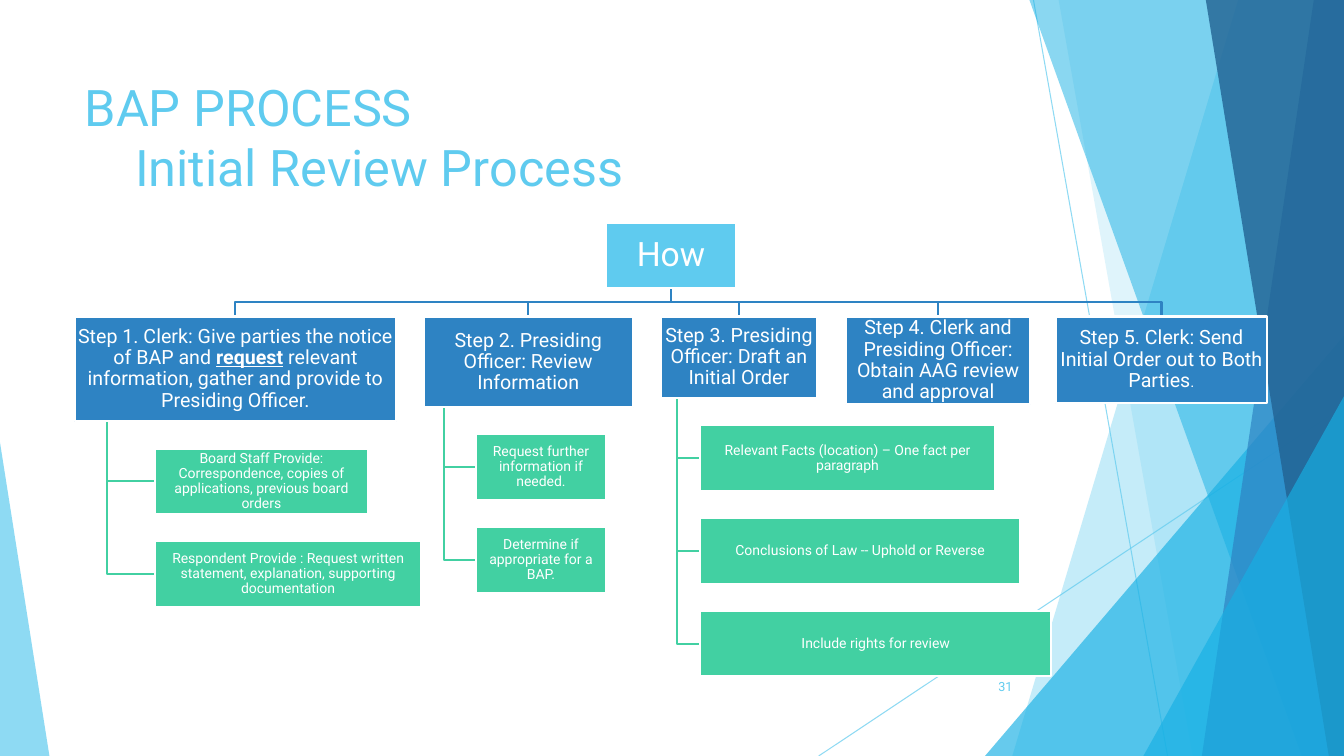
from lxml import etree
from pptx import Presentation
from pptx.dml.color import RGBColor
from pptx.enum import shapes, text
from pptx.oxml import ns
from pptx.util import Inches, Pt

SKY = RGBColor(0x5F, 0xCB, 0xEF)
CYAN = RGBColor(0x17, 0xB0, 0xE4)
BLUE = RGBColor(0x2E, 0x83, 0xC3)
NAVY = RGBColor(0x22, 0x62, 0x92)
GREEN = RGBColor(0x42, 0xD0, 0xA2)
WHITE = RGBColor(0xFF, 0xFF, 0xFF)
FONT = "Roboto"
WIDE, HIGH = 13.33, 7.5

BANDS = [
    ([(12.28, 0), (WIDE, 0), (WIDE, HIGH), (10.04, HIGH)], SKY, 36),
    ([(10.5, 0), (WIDE, 0), (WIDE, HIGH), (11.83, HIGH)], SKY, 20),
    ((9.77, 3.33, 3.56, 4.17, 1), CYAN, 66),
    ([(10.21, 0), (WIDE, 0), (WIDE, HIGH), (12.91, HIGH)], CYAN, 50),
    ([(13.03, 0), (WIDE, 0), (WIDE, HIGH), (11.92, HIGH)], BLUE, 70),
    ([(11.96, 0), (WIDE, 0), (WIDE, HIGH), (13.18, HIGH)], NAVY, 80),
    ((11.34, 3.93, 1.99, 3.57, 1), CYAN, 66),
    ((0, 4.39, 0.49, 3.11, 0), SKY, 70),
]

STEPS = [
    (0.74, 3.19, 1.04,
     ["Step 1. Clerk: Give parties the notice of BAP and ", "request",
      " relevant information, gather and provide to Presiding Officer."],
     [(2.11, "Board Staff Provide: Correspondence, copies of applications, "
             "previous board orders"),
      (2.64, "Respondent Provide : Request written statement, explanation, "
             "supporting documentation")]),
    (4.2, 2.08, 0.9, ["Step 2. Presiding Officer: Review Information"],
     [(1.29, "Request further information if needed."),
      (1.29, "Determine if appropriate for a BAP.")]),
    (6.56, 1.54, 0.81, ["Step 3. Presiding Officer: Draft an Initial Order"],
     [(2.92, "Relevant Facts (location) – One fact per paragraph"),
      (3.17, "Conclusions of Law -- Uphold or Reverse"),
      (3.48, "Include rights for review")]),
    (8.39, 1.83, 0.87,
     ["Step 4. Clerk and Presiding Officer: Obtain AAG review and approval"],
     []),
    (10.47, 2.1, 0.86,
     ["Step 5. Clerk: Send Initial Order out to Both Parties", "."], []),
]


def fade(part, pct):
    for clr in part.iter(ns.qn("a:srgbClr")):
        etree.SubElement(clr, ns.qn("a:alpha")).set("val", str(pct * 1000))


def style(run, size, color):
    run.font.name = FONT
    run.font.size = Pt(size)
    run.font.color.rgb = color


def trace(slide, points, close):
    pts = [(Inches(x), Inches(y)) for x, y in points]
    pen = slide.shapes.build_freeform(*pts[0], scale=1.0)
    pen.add_line_segments(pts[1:], close=close)
    form = pen.convert_to_shape()
    form.shadow.inherit = False
    return form


def backdrop(slide):
    for ends in [(10.25, 0, 11.58, HIGH), (WIDE, 4.03, 8.12, HIGH)]:
        line = slide.shapes.add_connector(
            shapes.MSO_CONNECTOR.STRAIGHT, *map(Inches, ends))
        line.line.color.rgb = SKY
        line.line.width = Pt(0.75)
        props = line._element.spPr
        fade(props, 70)
        etree.SubElement(props, ns.qn("a:effectLst"))
    for form, color, pct in BANDS:
        if isinstance(form, list):
            band = trace(slide, form, True)
        else:
            *box, tip = form
            band = slide.shapes.add_shape(
                shapes.MSO_SHAPE.ISOSCELES_TRIANGLE, *map(Inches, box))
            band.adjustments[0] = tip
            band.shadow.inherit = False
        band.fill.solid()
        band.fill.fore_color.rgb = color
        band.line.fill.background()
        fade(band._element.spPr, pct)


def heading(slide, left, top, width, height):
    title = slide.shapes.title
    title.left, title.top = Inches(left), Inches(top)
    title.width, title.height = Inches(width), Inches(height)
    frame = title.text_frame
    frame.text = "BAP PROCESS\v\tInitial Review Process"
    frame.auto_size = text.MSO_AUTO_SIZE.NONE
    frame.vertical_anchor = text.MSO_ANCHOR.TOP
    para = frame.paragraphs[0]
    para.alignment = text.PP_ALIGN.LEFT
    for run in para.runs:
        style(run, 36, SKY)


def elbow(slide, points, color):
    path = trace(slide, points, False)
    path.fill.background()
    path.line.color.rgb = color
    path.line.width = Pt(1.5)


def node(slide, left, top, width, height, words, size, color):
    box = slide.shapes.add_shape(
        shapes.MSO_SHAPE.RECTANGLE, *map(Inches, (left, top, width, height)))
    box.shadow.inherit = False
    box.fill.solid()
    box.fill.fore_color.rgb = color
    box.line.color.rgb = WHITE
    box.line.width = Pt(1.5)
    frame = box.text_frame
    frame.word_wrap = True
    frame.vertical_anchor = text.MSO_ANCHOR.MIDDLE
    frame.margin_left = frame.margin_right = Inches(0.01)
    frame.margin_top = frame.margin_bottom = Inches(0.01)
    para = frame.paragraphs[0]
    para.alignment = text.PP_ALIGN.CENTER
    para.line_spacing = 0.9
    for word in words:
        run = para.add_run()
        run.text = word
        style(run, 11 if word == "." else size, WHITE)
        if word == "request":
            run.font.bold = run.font.underline = True


def branch(slide, left, top, width, height, words, leaves):
    base = top + height
    trunk, edge = left + width * 0.1, left + width * 0.25
    tall, pitch = 0.65, 0.92
    tops = [base + 0.27 + i * pitch for i in range(len(leaves))]
    for y in tops:
        mid = y + tall / 2
        elbow(slide, [(trunk, base), (trunk, mid), (edge, mid)], GREEN)
    node(slide, left, top, width, height, words, 14, BLUE)
    for y, (span, label) in zip(tops, leaves):
        node(slide, edge, y, span, tall, [label], 10, GREEN)


def chart(slide, left, top, width, height):
    mid, base, row = left + width / 2, top + height, top + height + 0.28
    bar = (base + row) / 2
    for x, span, *_ in STEPS:
        end = x + span / 2
        elbow(slide, [(mid, base), (mid, bar), (end, bar), (end, row)], BLUE)
    node(slide, left, top, width, height, ["How"], 24, SKY)
    for x, span, tall, words, leaves in STEPS:
        branch(slide, x, row, span, tall, words, leaves)


def number(slide, left, top, width, height):
    box = slide.shapes.add_textbox(*map(Inches, (left, top, width, height)))
    frame = box.text_frame
    frame.word_wrap = True
    frame.text = "31"
    frame.vertical_anchor = text.MSO_ANCHOR.MIDDLE
    para = frame.paragraphs[0]
    para.alignment = text.PP_ALIGN.RIGHT
    style(para.runs[0], 9, SKY)


def main():
    deck = Presentation()
    deck.slide_width, deck.slide_height = Inches(WIDE), Inches(HIGH)
    slide = deck.slides.add_slide(deck.slide_layouts[5])
    backdrop(slide)
    heading(slide, 0.74, 0.7, 9.4, 1.44)
    chart(slide, 6.01, 2.21, 1.29, 0.65)
    number(slide, 9.39, 6.61, 0.75, 0.4)
    deck.save("out.pptx")


if __name__ == "__main__":
    main()
